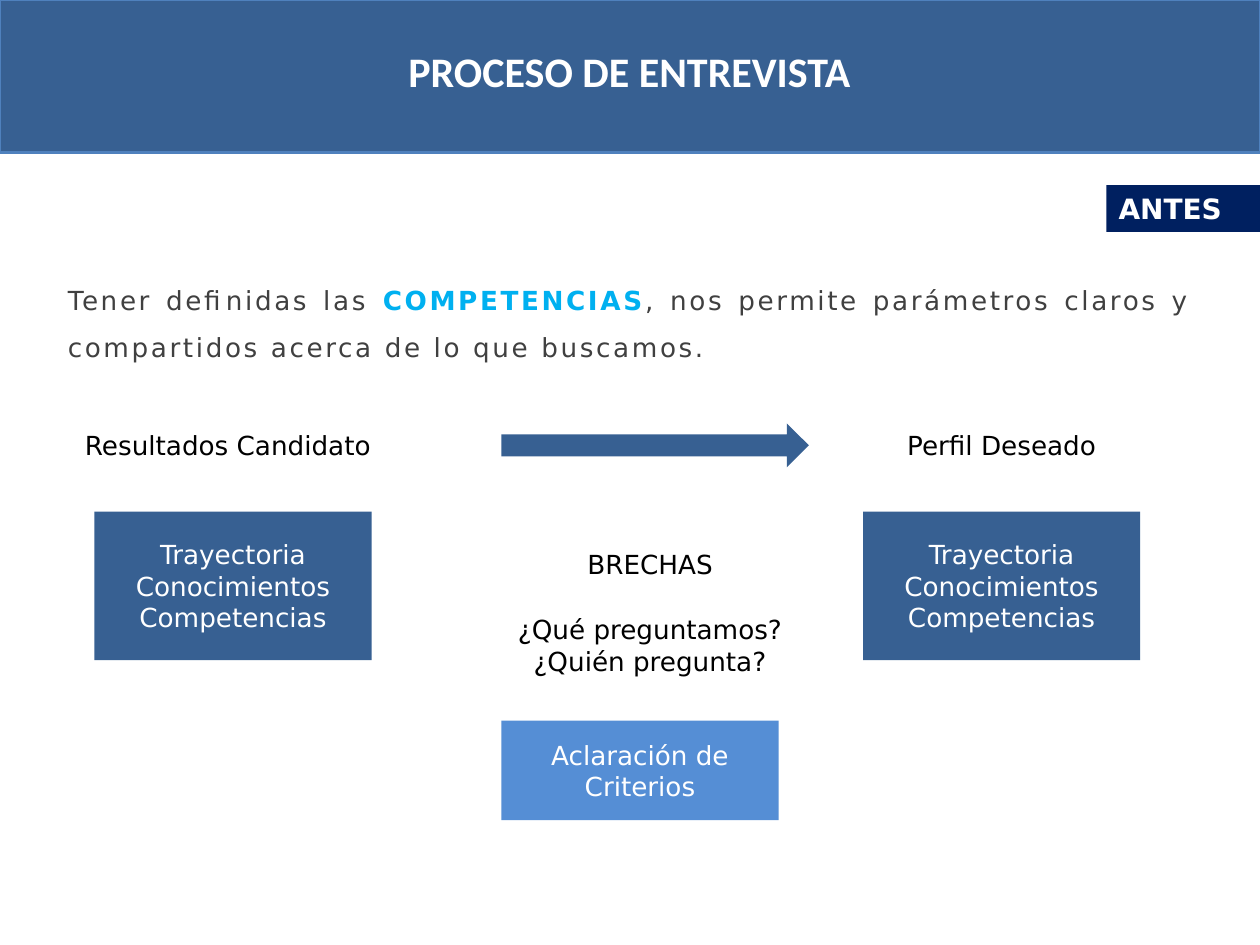
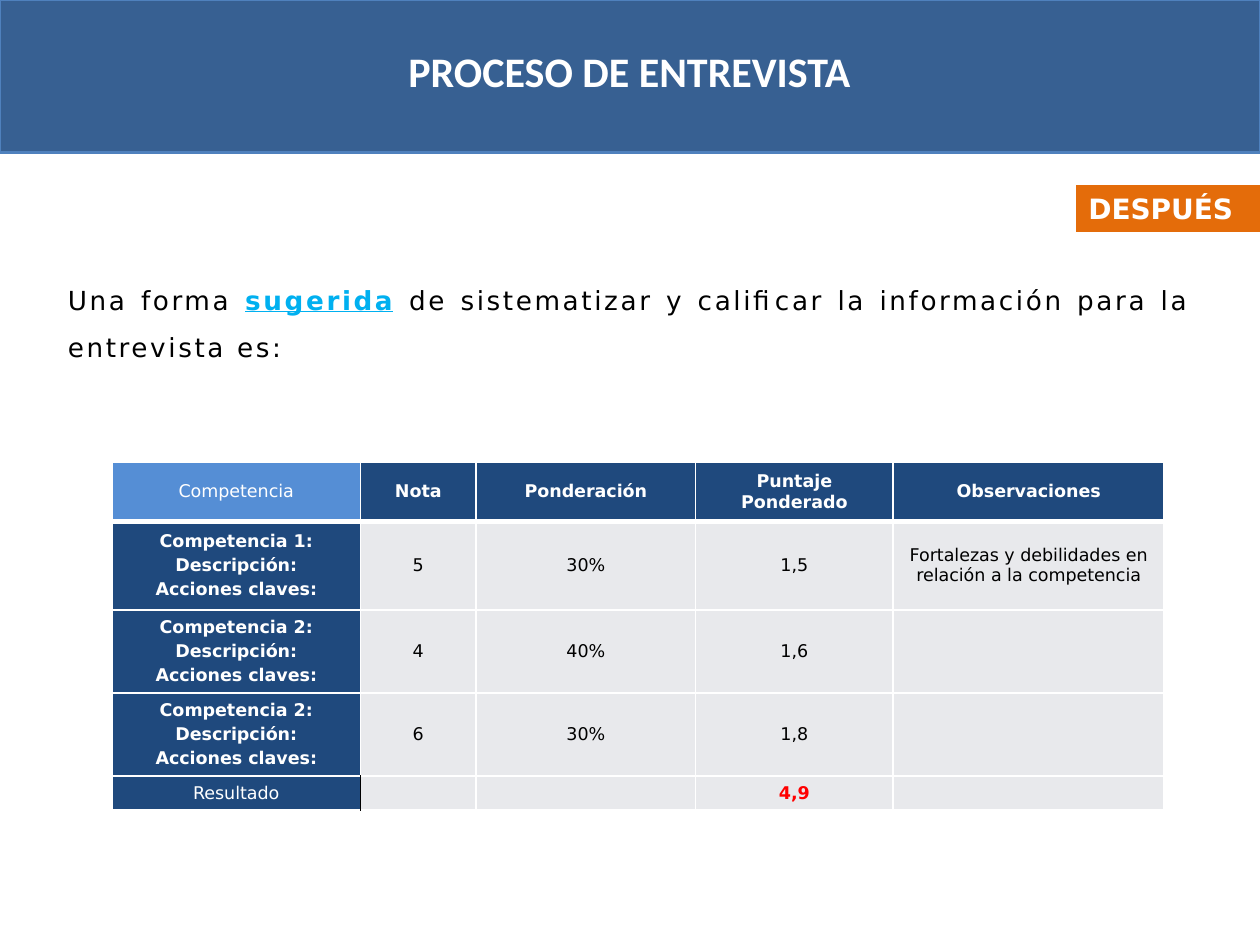
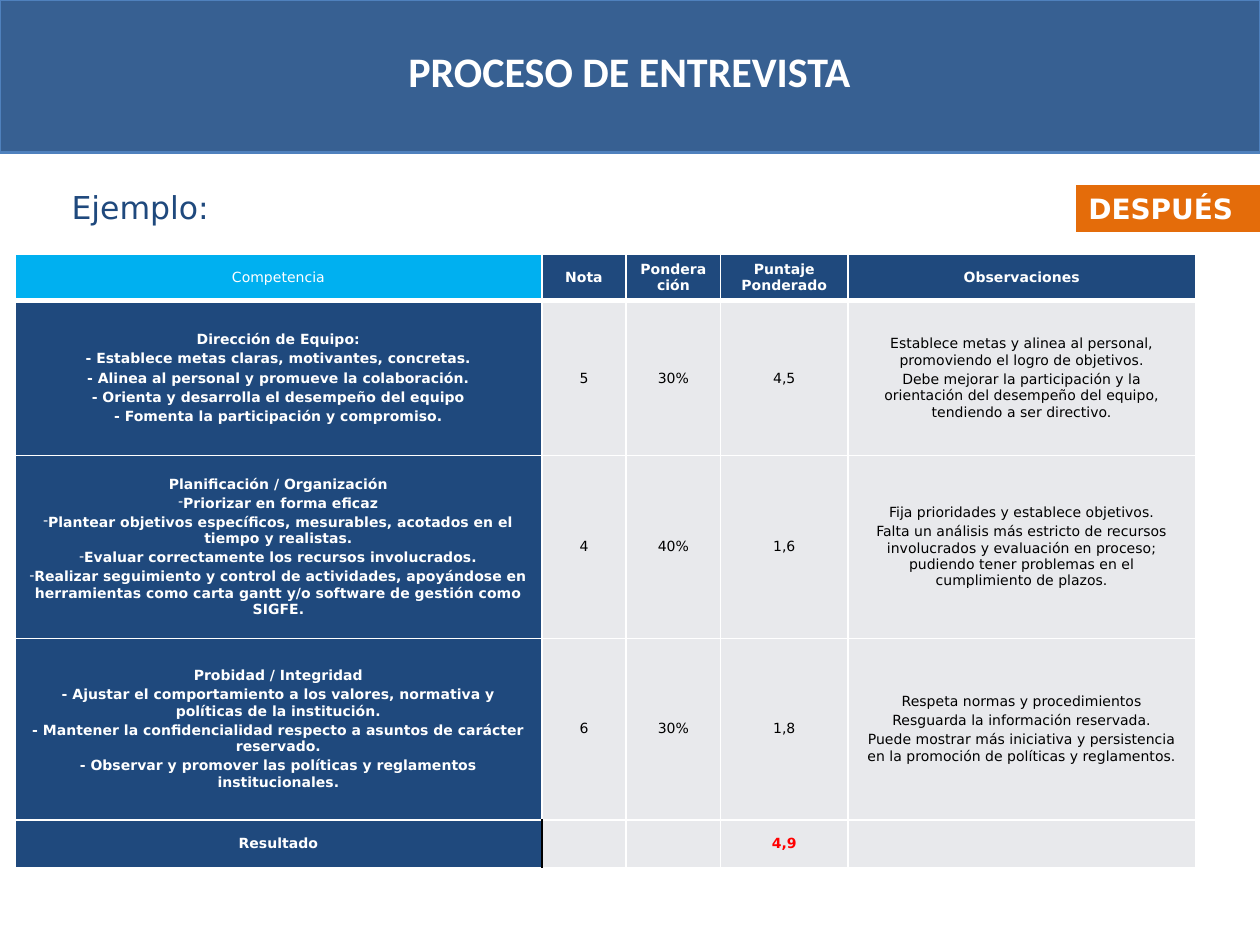
from lxml import etree
from pptx import Presentation
from pptx.dml.color import RGBColor
from pptx.enum import shapes, text
from pptx.oxml import ns
from pptx.util import Inches, Pt

STEEL = RGBColor(0x37, 0x60, 0x92)
EDGE = RGBColor(0x4F, 0x81, 0xBD)
LIGHT = RGBColor(0x55, 0x8E, 0xD5)
DEEP = RGBColor(0x1F, 0x49, 0x7D)
NAVY = RGBColor(0x00, 0x20, 0x60)
ORANGE = RGBColor(0xE4, 0x6C, 0x0A)
CYAN = RGBColor(0x00, 0xB0, 0xF0)
GREY = RGBColor(0x40, 0x40, 0x40)
PALE = RGBColor(0xE8, 0xE9, 0xEC)
RED = RGBColor(0xFF, 0x00, 0x00)
WHITE = RGBColor(0xFF, 0xFF, 0xFF)
BLACK = RGBColor(0x00, 0x00, 0x00)
FONT = "DejaVu Sans"
CENTER = text.PP_ALIGN.CENTER
RECT = shapes.MSO_SHAPE.RECTANGLE


def write(frame, lines, size, ink, bold=False, align=CENTER, gap=0, font=FONT):
    frame.word_wrap = True
    for i, line in enumerate(lines):
        para = frame.paragraphs[0] if i == 0 else frame.add_paragraph()
        para.alignment = align
        if i and gap:
            para.space_before = Pt(gap)
        if line.startswith("-") and not line.startswith("- "):
            props = para._p.get_or_add_pPr()
            props.set("marL", "0")
            props.set("indent", "0")
            etree.SubElement(props, ns.qn("a:buChar"), char="-")
            line = line[1:]
        run = para.add_run()
        run.text = line
        run.font.name = font
        run.font.size = Pt(size)
        run.font.bold = bold
        run.font.color.rgb = ink


def box(slide, area, fill=None, kind=RECT):
    area = [Inches(n) for n in area]
    if fill is None:
        return slide.shapes.add_textbox(*area)
    shape = slide.shapes.add_shape(kind, *area)
    shape.shadow.inherit = False
    shape.fill.solid()
    shape.fill.fore_color.rgb = fill
    shape.line.fill.background()
    return shape


deck = Presentation()
deck.slide_width = Inches(10)
deck.slide_height = Inches(7.5)

pages = []
for tag, left, fill in (("ANTES", 8.78, NAVY), ("DESPUÉS", 8.54, ORANGE), ("DESPUÉS", 8.54, ORANGE)):
    page = deck.slides.add_slide(deck.slide_layouts[6])
    band = box(page, (0, 0, 10, 1.21), STEEL)
    band.line.color.rgb = EDGE
    band.line.width = Pt(1.5)
    title = box(page, (0.44, 0.31, 9.11, 0.82))
    write(title.text_frame, ["PROCESO DE ENTREVISTA"], 24, WHITE, True, font="Calibri")
    label = box(page, (left, 1.47, 10 - left, 0.37), fill)
    write(label.text_frame, [tag], 16, WHITE, True, text.PP_ALIGN.LEFT)
    pages.append(page)
before, after, sample = pages

intros = (
    (before, GREY, False, "Tener definidas las ", "COMPETENCIAS",
     ", nos permite parámetros claros y compartidos acerca de lo que buscamos."),
    (after, BLACK, True, "Una forma ", "sugerida",
     " de sistematizar y calificar la información para la entrevista es:"),
)
for page, ink, under, *parts in intros:
    frame = box(page, (0.44, 2.08, 9.11, 1)).text_frame
    frame.word_wrap = True
    para = frame.paragraphs[0]
    para.alignment = text.PP_ALIGN.JUSTIFY
    para.line_spacing = 1.5
    for i, part in enumerate(parts):
        key = i == 1
        run = para.add_run()
        run.text = part
        run.font.name = FONT
        run.font.size = Pt(15)
        run.font.bold = key
        run.font.underline = key and under
        run.font.color.rgb = CYAN if key else ink
        run._r.get_or_add_rPr().set("spc", "150")

topics = ["Trayectoria", "Conocimientos", "Competencias"]
notes = (
    ((0.51, 3.36, 2.6, 0.35), None, ["Resultados Candidato"]),
    ((6.65, 3.36, 2.6, 0.35), None, ["Perfil Deseado"]),
    ((3.98, 4.3, 2.36, 0.35), None, ["BRECHAS"]),
    ((3.98, 4.82, 2.36, 0.61), None, ["¿Qué preguntamos?", "¿Quién pregunta?"]),
    ((0.75, 4.06, 2.2, 1.18), STEEL, topics),
    ((6.85, 4.06, 2.2, 1.18), STEEL, topics),
    ((3.98, 5.72, 2.2, 0.79), LIGHT, ["Aclaración de Criterios"]),
)
for area, fill, lines in notes:
    note = box(before, area, fill)
    write(note.text_frame, lines, 15, WHITE if fill else BLACK)
box(before, (3.98, 3.36, 2.44, 0.35), STEEL, shapes.MSO_SHAPE.RIGHT_ARROW)

lead = box(sample, (0.47, 1.44, 7, 0.42))
write(lead.text_frame, ["Ejemplo:"], 18, DEEP, align=text.PP_ALIGN.LEFT)

head = [["Competencia"], ["Nota"], ["Ponderación"], ["Puntaje Ponderado"], ["Observaciones"]]
total = [[], [], ["4,9"], []]
parts = ["Descripción:", "Acciones claves:"]
brief = [
    head,
    [["Competencia 1:"] + parts, ["5"], ["30%"], ["1,5"],
     ["Fortalezas y debilidades en relación a la competencia"]],
    [["Competencia 2:"] + parts, ["4"], ["40%"], ["1,6"], []],
    [["Competencia 2:"] + parts, ["6"], ["30%"], ["1,8"], []],
    [["Resultado"]] + total,
]
full = [
    head,
    [["Dirección de Equipo:",
      "- Establece metas claras, motivantes, concretas.",
      "- Alinea al personal y promueve la colaboración.",
      "- Orienta y desarrolla el desempeño del equipo",
      "- Fomenta la participación y compromiso."],
     ["5"], ["30%"], ["4,5"],
     ["Establece metas y alinea al personal, promoviendo el logro de objetivos.",
      "Debe mejorar la participación y la orientación del desempeño del equipo, tendiendo a ser directivo."]],
    [["Planificación / Organización",
      "-Priorizar en forma eficaz",
      "-Plantear objetivos específicos, mesurables, acotados en el tiempo y realistas.",
      "-Evaluar correctamente los recursos involucrados.",
      "-Realizar seguimiento y control de actividades, apoyándose en herramientas "
      "como carta gantt y/o software de gestión como SIGFE."],
     ["4"], ["40%"], ["1,6"],
     ["Fija prioridades y establece objetivos.",
      "Falta un análisis más estricto de recursos involucrados y evaluación en proceso; "
      "pudiendo tener problemas en el cumplimiento de plazos."]],
    [["Probidad / Integridad",
      "- Ajustar el comportamiento a los valores, normativa y políticas de la institución.",
      "- Mantener la confidencialidad respecto a asuntos de carácter reservado.",
      "- Observar y promover las políticas y reglamentos institucionales."],
     ["6"], ["30%"], ["1,8"],
     ["Respeta normas y procedimientos",
      "Resguarda la información reservada.",
      "Puede mostrar más iniciativa y persistencia en la promoción de políticas y reglamentos."]],
    [["Resultado"]] + total,
]
grids = (
    (after, brief, 0.89, 3.67, [1.97, 0.92, 1.74, 1.57, 2.15], [0.47, 0.7, 0.66, 0.66, 0.27], 10, LIGHT, False),
    (sample, full, 0.12, 2.02, [4.18, 0.67, 0.75, 1.01, 2.76], [0.36, 1.23, 1.45, 1.44, 0.38], 8, CYAN, True),
)
for page, data, left, top, wide, high, size, first, strong in grids:
    area = [Inches(n) for n in (left, top, sum(wide), sum(high))]
    grid = page.shapes.add_table(len(high), len(wide), *area).table
    grid.first_row = grid.horz_banding = False
    for col, n in zip(grid.columns, wide):
        col.width = Inches(n)
    for row, n in zip(grid.rows, high):
        row.height = Inches(n)
    last = len(data) - 1
    for r, row in enumerate(data):
        for c, lines in enumerate(row):
            cell = grid.cell(r, c)
            cell.vertical_anchor = text.MSO_ANCHOR.MIDDLE
            props = cell._tc.get_or_add_tcPr()
            for side in "LRTB":
                thick = (r, side) in ((0, "B"), (1, "T"))
                dark = r == last and (c, side) in ((0, "R"), (1, "L"))
                edge = etree.SubElement(props, ns.qn("a:ln" + side), w=str(Pt(3 if thick else 1)))
                solid = etree.SubElement(edge, ns.qn("a:solidFill"))
                etree.SubElement(solid, ns.qn("a:srgbClr"), val=str(BLACK if dark else WHITE))
            cell.fill.solid()
            blue = r == 0 or c == 0
            cell.fill.fore_color.rgb = first if r == c == 0 else DEEP if blue else PALE
            ink, bold = (WHITE, True) if blue else (BLACK, False)
            if r == c == 0:
                bold = False
            elif r == last:
                ink, bold = (WHITE, strong) if c == 0 else (RED, True)
            write(cell.text_frame, lines, size, ink, bold, gap=size / 5)
            if not lines:
                etree.SubElement(cell.text_frame.paragraphs[0]._p, ns.qn("a:endParaRPr"), sz=str(size * 100))

deck.save("out.pptx")
